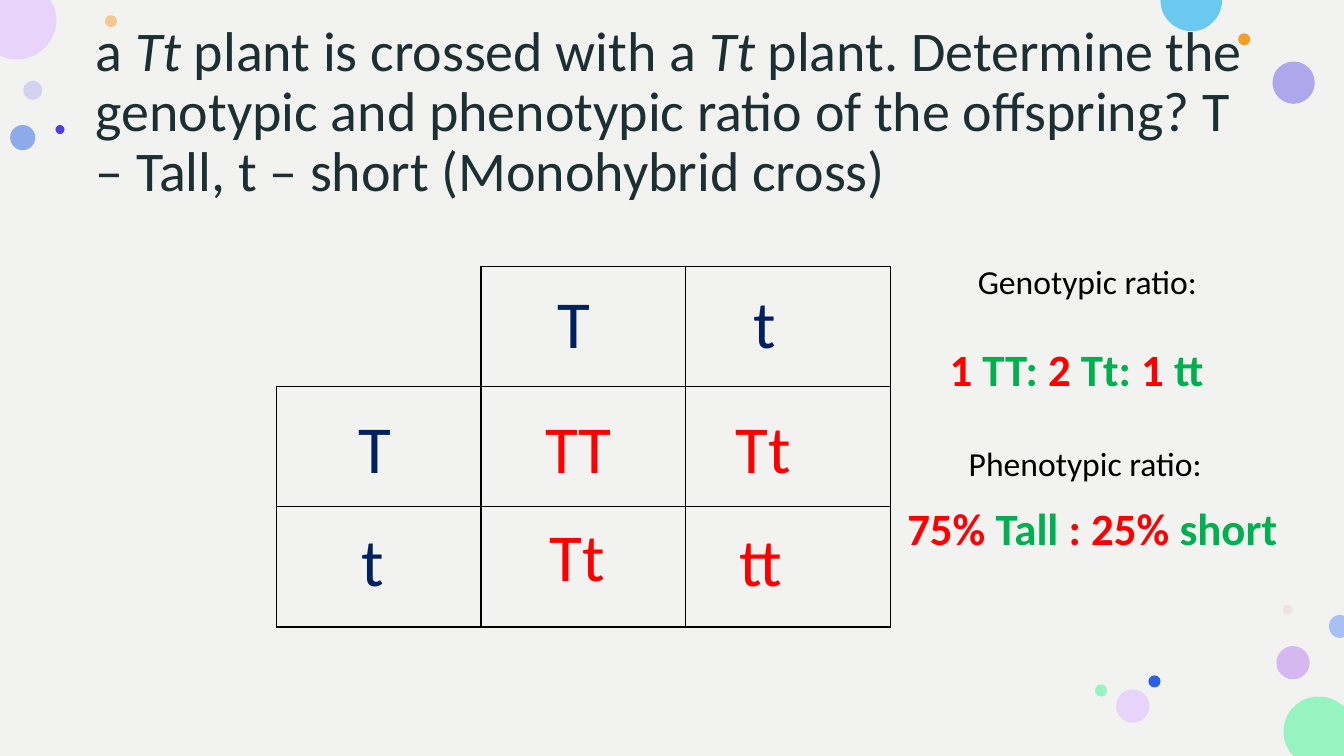
from lxml import etree
from pptx import Presentation
from pptx.dml.color import RGBColor
from pptx.enum.shapes import MSO_SHAPE
from pptx.enum.text import MSO_ANCHOR, MSO_AUTO_SIZE, PP_ALIGN
from pptx.oxml.ns import qn
from pptx.util import Pt

PX = 9144  # 100 px to the inch
SLIDE_W, SLIDE_H = 1333, 750
FONT = "Calibri"
OVAL = MSO_SHAPE.OVAL
RECTANGLE = MSO_SHAPE.RECTANGLE
MIDDLE = MSO_ANCHOR.MIDDLE
LEFT = PP_ALIGN.LEFT
FIT_SHAPE = MSO_AUTO_SIZE.SHAPE_TO_FIT_TEXT
NO_FIT = MSO_AUTO_SIZE.NONE

PAPER = RGBColor(0xF2, 0xF3, 0xF0)
INK = RGBColor(0x1C, 0x2F, 0x32)
BLACK = RGBColor(0, 0, 0)
NAVY = RGBColor(0x00, 0x20, 0x60)
RED = RGBColor(0xFF, 0, 0)
GREEN = RGBColor(0x00, 0xB0, 0x50)
LAVENDER = RGBColor(0xB9, 0xB1, 0xF1)
ORANGE = RGBColor(0xF3, 0x9E, 0x29)
ORCHID = RGBColor(0xBB, 0x7F, 0xF1)
BLUE = RGBColor(0x29, 0x62, 0xE7)
VIOLET = RGBColor(0x95, 0x8B, 0xEA)
ROSE = RGBColor(0xE3, 0xBE, 0xBE)
LILAC = RGBColor(0xE8, 0xD4, 0xFA)
MINT = RGBColor(0x95, 0xF4, 0xC0)
SKY = RGBColor(0x6B, 0xC9, 0xEF)
INDIGO = RGBColor(0x4F, 0x3D, 0xDC)
PALE_BLUE = RGBColor(0xA9, 0xC0, 0xF5)

# left, top, diameter, colour, opacity in percent
BUBBLES = [
    (23, 80, 19, LAVENDER, 50), (104, 15, 12, ORANGE, 50),
    (1266, 641, 33, ORCHID, 50), (10, 124, 25, BLUE, 50),
    (1262, 61, 42, VIOLET, 72), (1228, 33, 12, ORANGE, 100),
    (1272, 600, 10, ROSE, 28), (1139, 670, 12, BLUE, 100),
    (1107, 684, 33, LILAC, 100), (1086, 679, 12, MINT, 100),
    (55, 124, 9, INDIGO, 100),
]
# colour, start point, then segments: one point for a line, three for a curve
EDGE_BUBBLES = [
    (MINT, (1308, 691), [
        [(1318, 691), (1326, 695), (1333, 701)], [(1333, 750)], [(1283, 750)],
        [(1281, 748)], [(1276, 742), (1273, 734), (1273, 726)],
        [(1273, 706), (1289, 691), (1308, 691)]]),
    (LILAC, (0, 0), [
        [(50, 0)], [(53, 5)], [(55, 9), (56, 14), (56, 20)],
        [(56, 41), (38, 59), (17, 59)], [(11, 59), (6, 58), (2, 56)],
        [(0, 55)]]),
    (SKY, (1151, 0), [
        [(1212, 0)], [(1212, 1)], [(1212, 17), (1198, 31), (1182, 31)],
        [(1165, 31), (1151, 17), (1151, 1)]]),
    (PALE_BLUE, (1329, 610), [
        [(1333, 611)], [(1333, 632)], [(1329, 633)],
        [(1323, 633), (1318, 628), (1318, 621)],
        [(1318, 615), (1323, 610), (1329, 610)]]),
]


def paint(sp, color, opacity=100):
    sp.shadow.inherit = False
    sp.line.fill.background()
    sp.fill.solid()
    sp.fill.fore_color.rgb = color
    if opacity < 100:
        clr = sp._element.spPr.find(".//" + qn("a:srgbClr"))
        etree.SubElement(clr, qn("a:alpha"), val=str(opacity * 1000))


def add_shape(slide, kind, left, top, width, height, color, opacity=100):
    sp = slide.shapes.add_shape(
        kind, left * PX, top * PX, width * PX, height * PX)
    paint(sp, color, opacity)


def add_edge_bubble(slide, color, start, segments):
    """Draw a circle cut off at the slide edge, with true curves."""
    outline = slide.shapes.build_freeform(*start, scale=float(PX))
    outline.add_line_segments([pt for seg in segments for pt in seg])
    # whole-px path units are kept, so the curves scale with the shape
    sp = outline.convert_to_shape()
    lines = list(sp._element.iter(qn("a:lnTo")))
    for segment in segments:
        steps, lines = lines[:len(segment)], lines[len(segment):]
        if len(segment) == 3:
            curve = etree.Element(qn("a:cubicBezTo"))
            steps[0].addprevious(curve)
            for step in steps:
                curve.append(step[0])
                step.getparent().remove(step)
    paint(sp, color)


def add_backdrop(slide):
    add_shape(slide, RECTANGLE, 0, 0, SLIDE_W, SLIDE_H, PAPER)
    for left, top, size, color, opacity in BUBBLES:
        add_shape(slide, OVAL, left, top, size, size, color, opacity)
    for bubble in EDGE_BUBBLES:
        add_edge_bubble(slide, *bubble)


def add_run(p, text, size, color, bold=False, italic=False):
    r = p.add_run()
    r.text = text
    r.font.name = FONT
    r.font.size = Pt(size)
    r.font.bold = bold
    r.font.italic = italic
    r.font.color.rgb = color


def add_title(slide, left, top, width, height):
    title = slide.shapes.title
    title.left, title.top = left * PX, top * PX
    title.width, title.height = width * PX, height * PX
    slide.shapes._spTree.append(title._element)  # in front of the backdrop
    tf = title.text_frame
    tf.word_wrap = True
    tf.auto_size = NO_FIT
    tf.vertical_anchor = MIDDLE
    p = tf.paragraphs[0]
    p.alignment = LEFT
    p.line_spacing = 0.9
    parts = ["a ", "Tt", " plant is crossed with a ", "Tt",
             " plant. Determine the genotypic and phenotypic ratio of the "
             "offspring? T – Tall, t – short (Monohybrid cross)"]
    for text in parts:
        add_run(p, text, 40, INK, italic=text == "Tt")


def add_text(slide, left, top, width, height, size, runs, bold=False):
    box = slide.shapes.add_textbox(left * PX, top * PX, width * PX, height * PX)
    tf = box.text_frame
    tf.word_wrap = True
    tf.auto_size = FIT_SHAPE
    for text, color in runs:
        add_run(tf.paragraphs[0], text, size, color, bold)


def set_borders(cell, sides):
    tc_pr = cell._tc.get_or_add_tcPr()
    for side in "LRTB":
        ln = etree.SubElement(tc_pr, qn("a:ln" + side), w=str(Pt(1)))
        if side in sides:
            fill = etree.SubElement(ln, qn("a:solidFill"))
            etree.SubElement(fill, qn("a:srgbClr"), val=str(BLACK))
        else:
            etree.SubElement(ln, qn("a:noFill"))


def add_punnett_square(slide, left, top, width, height):
    table = slide.shapes.add_table(
        3, 3, left * PX, top * PX, width * PX, height * PX).table
    table.first_row = table.horz_banding = False
    for row in range(3):
        for col in range(3):
            cell = table.cell(row, col)
            set_borders(cell, "RB" if row == col == 0 else "LRTB")
            cell.fill.background()
    # offsets from the corner of the square
    alleles = [
        ("T", 269, 10, NAVY), ("t", 464, 10, NAVY),
        ("T", 72, 134, NAVY), ("t", 75, 246, NAVY),
        ("TT", 257, 134, RED), ("Tt", 446, 134, RED),
        ("Tt", 261, 241, RED), ("tt", 450, 246, RED),
    ]
    for text, dx, dy, color in alleles:
        add_text(slide, left + dx, top + dy, 53 if len(text) == 1 else 88, 91,
                 48, [(text, color)])


def add_ratios(slide, left, top):
    add_text(slide, left + 70, top, 250, 50, 24, [("Genotypic ratio:", BLACK)])
    add_text(slide, left + 61, top + 180, 290, 50, 24,
             [("Phenotypic ratio:", BLACK)])
    add_text(slide, left + 42, top + 80, 290, 64, 32,
             [("1", RED), (" TT: ", GREEN), ("2", RED), (" Tt: ", GREEN),
              ("1 ", RED), ("tt", GREEN)], bold=True)
    add_text(slide, left, top + 238, 412, 64, 32,
             [("75% ", RED), ("Tall", GREEN), (" : 25% ", RED),
              ("short", GREEN)], bold=True)


def main():
    prs = Presentation()
    prs.slide_width, prs.slide_height = SLIDE_W * PX, SLIDE_H * PX
    slide = prs.slides.add_slide(prs.slide_layouts.get_by_name("Title Only"))
    add_backdrop(slide)
    add_title(slide, 85, 40, 1166, 145)
    add_punnett_square(slide, 274, 264, 609, 358)
    add_ratios(slide, 890, 254)
    prs.save("out.pptx")


if __name__ == "__main__":
    main()
